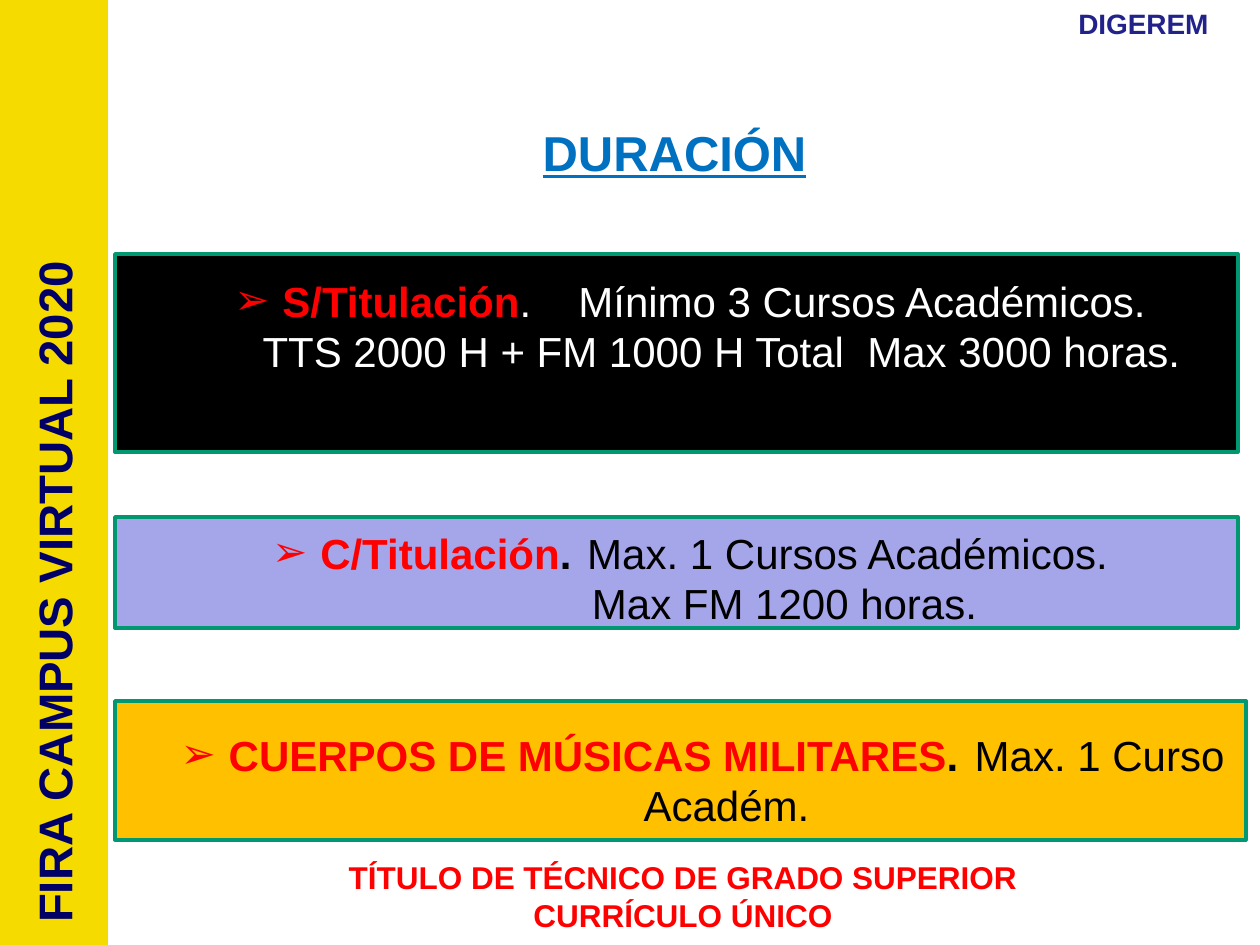
import pptx
import pptx.dml.color
import pptx.enum.shapes
import pptx.enum.text
import pptx.oxml.ns
import pptx.util
from lxml import etree

RGBColor = pptx.dml.color.RGBColor
YELLOW = RGBColor(0xF6, 0xDB, 0x00)
LAVENDER = RGBColor(0xA5, 0xA5, 0xE9)
AMBER = RGBColor(0xFF, 0xC0, 0x00)
GREEN = RGBColor(0x00, 0x97, 0x71)
RED = RGBColor(0xFF, 0x00, 0x00)
BLACK = RGBColor(0x00, 0x00, 0x00)
WHITE = RGBColor(0xFF, 0xFF, 0xFF)
BLUE = RGBColor(0x00, 0x70, 0xC0)
NAVY = RGBColor(0x00, 0x00, 0x66)
INDIGO = RGBColor(0x22, 0x22, 0x8B)

PX_PER_INCH = 126
FONT = "Arial"
BODY_SIZE = 24
LINE_FACTOR = 1.2


def px(length):
    return round(length * 914400 / PX_PER_INCH)


def add_rectangle(slide, box, fill, line, line_width):
    shape = slide.shapes.add_shape(
        pptx.enum.shapes.MSO_SHAPE.RECTANGLE, *map(px, box))
    shape.shadow.inherit = False
    shape.fill.solid()
    shape.fill.fore_color.rgb = fill
    shape.line.color.rgb = line
    shape.line.width = pptx.util.Pt(line_width)


def add_text_box(slide, box):
    shape = slide.shapes.add_textbox(*map(px, box))
    shape.text_frame.word_wrap = True
    return shape


def format_paragraph(paragraph, size):
    paragraph.alignment = pptx.enum.text.PP_ALIGN.CENTER
    paragraph.line_spacing = pptx.util.Pt(round(size * LINE_FACTOR, 1))
    paragraph.font.name = FONT
    paragraph.font.size = pptx.util.Pt(size)


def add_heading(slide, box, lines, size, color, underline=False):
    """Bold centred lines in one box."""
    shape = add_text_box(slide, box)
    frame = shape.text_frame
    for index, line in enumerate(lines):
        paragraph = frame.add_paragraph() if index else frame.paragraphs[0]
        paragraph.text = line
        format_paragraph(paragraph, size)
        paragraph.font.bold = True
        paragraph.font.color.rgb = color
        if underline:
            paragraph.font.underline = True
    return shape


def set_indent(paragraph, margin, hanging=0):
    properties = paragraph._p.get_or_add_pPr()
    properties.set("marL", str(px(margin)))
    properties.set("indent", str(px(-hanging)))
    return properties


def add_bullet(properties, tab_stop):
    def child(parent, tag, **attributes):
        return etree.SubElement(parent, pptx.oxml.ns.qn(tag), **attributes)

    child(child(properties, "a:buClr"), "a:srgbClr", val=str(RED))
    child(properties, "a:buFont", typeface=FONT)
    child(properties, "a:buChar", char="➢")
    if tab_stop:
        child(child(properties, "a:tabLst"), "a:tab",
              pos=str(px(tab_stop)), algn="l")


def add_panel(slide, box, fill, text_top, runs, margin,
              tab_stop=None, second_line=None, second_margin=0):
    """Framed panel with a bulleted line and an optional line below it."""
    left, top, width, height = box
    add_rectangle(slide, box, fill, GREEN, 2)
    frame = add_text_box(
        slide, (left - 57, top + text_top, 1201, 113)).text_frame

    paragraph = frame.paragraphs[0]
    add_bullet(set_indent(paragraph, margin, 48), tab_stop)
    format_paragraph(paragraph, BODY_SIZE)
    for text, color, bold in runs:
        run = paragraph.add_run()
        run.text = text
        run.font.color.rgb = color
        run.font.bold = bold

    if second_line:
        paragraph = frame.add_paragraph()
        paragraph.text = second_line
        set_indent(paragraph, second_margin)
        format_paragraph(paragraph, BODY_SIZE)
        paragraph.font.color.rgb = runs[-1][1]


def add_sidebar(slide, box):
    """Yellow band with the event name reading upwards."""
    left, top, width, height = box
    add_rectangle(slide, box, YELLOW, YELLOW, 0.75)
    label = add_heading(slide, (left - 302, top + 556, 714, 72),
                        ["FIRA CAMPUS VIRTUAL 2020"], 27, NAVY)
    label.rotation = 270


def main():
    presentation = pptx.Presentation()
    presentation.slide_width = px(1260)
    presentation.slide_height = px(945)
    slide = presentation.slides.add_slide(presentation.slide_layouts[6])

    add_sidebar(slide, (0, 0, 107, 945))

    # Headings
    add_heading(slide, (1027, 0, 233, 47), ["DIGEREM"], 16, INDIGO)
    add_heading(slide, (461, 116, 427, 72), ["DURACIÓN"], 28, BLUE,
                underline=True)

    # Duration panels
    add_panel(slide, (115, 254, 1123, 198), BLACK, 15,
              [("S/Titulación", RED, True),
               (".\tMínimo 3 Cursos Académicos.", WHITE, False)],
              111, tab_stop=407,
              second_line="TTS 2000 H + FM 1000 H Total  Max 3000 horas.",
              second_margin=126)
    add_panel(slide, (115, 517, 1123, 111), LAVENDER, 4,
              [("C/Titulación", RED, True), (". ", BLACK, True),
               ("\tMax. 1 Cursos Académicos.", BLACK, False)],
              111, second_line="\t\t\tMax FM 1200 horas.", second_margin=63)
    add_panel(slide, (115, 701, 1131, 139), AMBER, 22,
              [("CUERPOS DE MÚSICAS MILITARES", RED, True),
               (". ", BLACK, True),
               ("\tMax. 1 Curso Académ.", BLACK, False)],
              136)

    # Closing note
    add_heading(slide, (130, 852, 1106, 89),
                ["TÍTULO DE TÉCNICO DE GRADO SUPERIOR", "CURRÍCULO ÚNICO"],
                18, RED)

    presentation.save("out.pptx")


if __name__ == "__main__":
    main()
